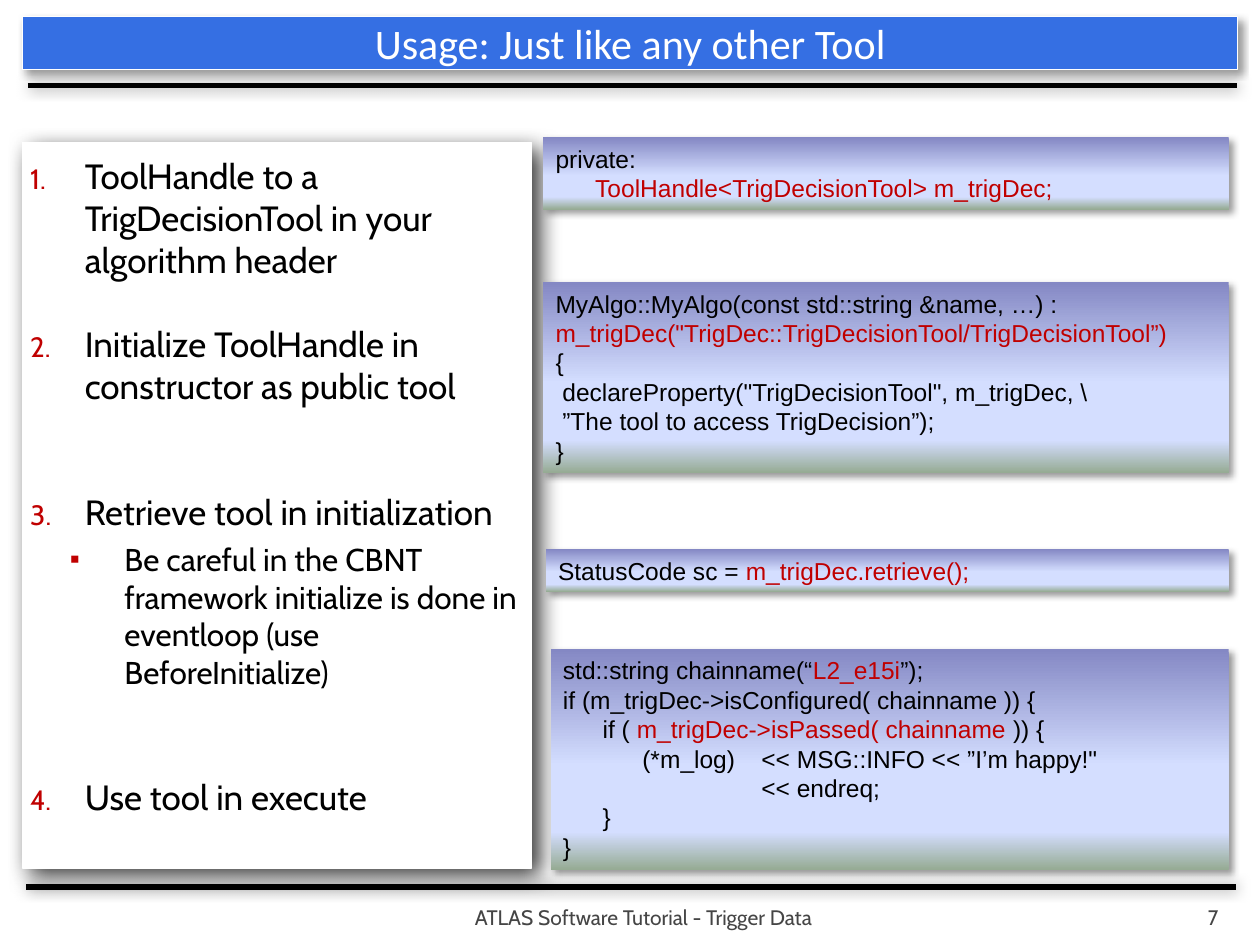
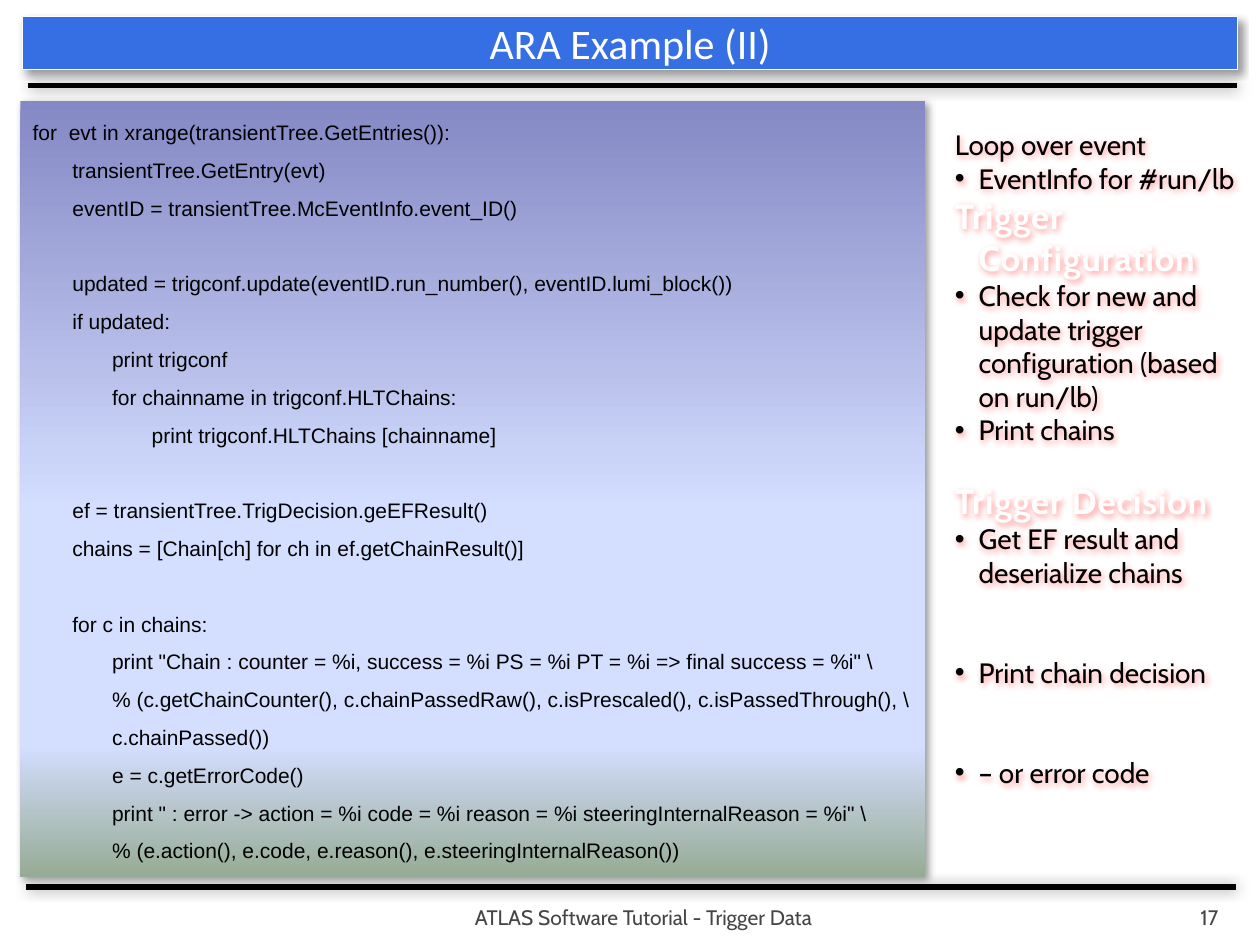
from pptx import Presentation
from pptx.dml.color import RGBColor
from pptx.enum import shapes, text
from pptx.oxml import parse_xml
from pptx.oxml.ns import nsdecls
from pptx.util import Cm, Pt

BLUE = RGBColor(0x35, 0x6F, 0xE3)
WHITE = RGBColor(0xFF, 0xFF, 0xFF)
HEADING = RGBColor(0xFF, 0xFE, 0xFE)
BLACK = RGBColor(0, 0, 0)
RED = RGBColor(0xC0, 0, 0)
GLOW = RGBColor(0xFF, 0, 0)
HEADING_EDGE = RGBColor(0xBF, 0x36, 0x35)
GREY = RGBColor(0x45, 0x45, 0x45)
CODE_STOPS = [
    (0, RGBColor(0x84, 0x88, 0xC4)),
    (53, RGBColor(0xD4, 0xDE, 0xFF)),
    (83, RGBColor(0xD4, 0xDE, 0xFF)),
    (100, RGBColor(0x96, 0xAB, 0x94)),
]
TAB = Cm(0.8)
MARK = "§"

STEPS = [
    (0, 0, "ToolHandle to a TrigDecisionTool in your algorithm header"),
    (0, 24, "Initialize ToolHandle in constructor as public tool"),
    (0, 48, "Retrieve tool in initialization"),
    (1, 4, "Be careful in the CBNT framework initialize is done in "
           "eventloop (use BeforeInitialize)"),
    (0, 48, "Use tool in execute"),
]

USAGE_SNIPPETS = [
    ((10.95, 2.77, 13.82, 1.45), """private:
\t§ToolHandle<TrigDecisionTool> m_trigDec;"""),
    ((10.95, 5.69, 13.82, 3.84),
     """MyAlgo::MyAlgo(const std::string &name, …) : §m_trigDec("TrigDec::TrigDecisionTool/TrigDecisionTool”)
{
 declareProperty("TrigDecisionTool", m_trigDec, \\
 ”The tool to access TrigDecision”);
}"""),
    ((11, 11.07, 13.77, 0.86), "StatusCode sc = §m_trigDec.retrieve();"),
    ((11.1, 13.08, 13.67, 4.45), """std::string chainname(“§L2_e15i§”);
if (m_trigDec->isConfigured( chainname )) {
\tif ( §m_trigDec->isPassed( chainname §)) {
\t\t(*m_log) \t<< MSG::INFO << ”I’m happy!"
\t\t\t\t\t<< endreq;
\t}
}"""),
]

EVENT_LOOP = """for  evt in xrange(transientTree.GetEntries()):
\ttransientTree.GetEntry(evt)
\teventID = transientTree.McEventInfo.event_ID()

\tupdated = trigconf.update(eventID.run_number(), eventID.lumi_block())
\tif updated:
\t\tprint trigconf
\t\tfor chainname in trigconf.HLTChains:
\t\t\tprint trigconf.HLTChains [chainname]

\tef = transientTree.TrigDecision.geEFResult()
\tchains = [Chain[ch] for ch in ef.getChainResult()]

\tfor c in chains:
\t\tprint "Chain : counter = %i, success = %i PS = %i PT = %i => final success = %i" \\
\t\t% (c.getChainCounter(), c.chainPassedRaw(), c.isPrescaled(), c.isPassedThrough(), \\
\t\tc.chainPassed())
\t\te = c.getErrorCode()
\t\tprint " : error -> action = %i code = %i reason = %i steeringInternalReason = %i" \\
\t\t% (e.action(), e.code, e.reason(), e.steeringInternalReason())"""

LOOP_NOTES = [
    ("plain", 0, "Loop over event"),
    ("bullet", 0, "EventInfo for #run/lb"),
    ("heading", 0, "Trigger Configuration"),
    ("bullet", 0, "Check for new and update trigger configuration (based on run/lb)"),
    ("bullet", 0, "Print chains"),
    ("heading", 19, "Trigger Decision"),
    ("bullet", 0, "Get EF result and deserialize chains"),
    ("bullet", 38, "Print chain decision"),
    ("bullet", 38, "– or error code"),
]


def xml(markup):
    head, tail = markup.split(">", 1)
    slash = "/" if head.endswith("/") else ""
    return parse_xml(f"{head.rstrip('/')} {nsdecls('a')}{slash}>{tail}")


def cast_shadow(part, alpha, blur, distance, angle, color=BLACK):
    part._element.spPr.append(xml(
        f'<a:effectLst><a:outerShdw blurRad="{Pt(blur)}" dist="{Pt(distance)}" '
        f'dir="{angle * 60000}" algn="tl" rotWithShape="0"><a:srgbClr val="{color}">'
        f'<a:alpha val="{alpha * 1000}"/></a:srgbClr></a:outerShdw></a:effectLst>'))


def style(run, font, size, color, bold=False):
    run.font.name = font
    run.font.size = Pt(size)
    run.font.color.rgb = color
    run.font.bold = bold


def set_frame(frame, anchor, insets=(0.25, 0.13, 0.25, 0.13)):
    frame.word_wrap = True
    frame.vertical_anchor = anchor
    (frame.margin_left, frame.margin_top,
     frame.margin_right, frame.margin_bottom) = map(Cm, insets)


def add_panel(slide, box):
    panel = slide.shapes.add_shape(shapes.MSO_SHAPE.RECTANGLE, *map(Cm, box))
    panel.line.fill.background()
    return panel


def paragraphs(frame, count):
    return [frame.paragraphs[0]] + [frame.add_paragraph() for _ in range(count - 1)]


def indent(paragraph, left, hang, *bullet):
    props = paragraph._p.get_or_add_pPr()
    props.set("marL", str(Cm(left)))
    props.set("indent", str(-Cm(hang)))
    for markup in bullet:
        props.append(xml(markup))


def add_title(slide, heading):
    title = slide.shapes.title
    title.left, title.top, title.width, title.height = map(Cm, (0.46, 0.33, 24.49, 1.07))
    title.fill.solid()
    title.fill.fore_color.rgb = BLUE
    title.line.color.rgb = WHITE
    title.line.width = Pt(0.75)
    cast_shadow(title, 40, 4, 3, 45)
    title.text_frame.text = heading
    title.text_frame.auto_size = text.MSO_AUTO_SIZE.NONE
    set_frame(title.text_frame, text.MSO_ANCHOR.MIDDLE)
    line = title.text_frame.paragraphs[0]
    line.alignment = text.PP_ALIGN.CENTER
    style(line.runs[0], "Calibri", 24, WHITE)


def add_rule(slide, left, top, width):
    rule = slide.shapes.add_connector(
        shapes.MSO_CONNECTOR.STRAIGHT, Cm(left), Cm(top), Cm(left + width), Cm(top))
    rule.line.color.rgb = BLACK
    rule.line.width = Pt(3)
    cast_shadow(rule, 50, 7.5, 0, 0)


def add_footer(slide, box, words, alignment, side_inset):
    footer = slide.shapes.add_textbox(*map(Cm, box))
    footer.text_frame.text = words
    set_frame(footer.text_frame, text.MSO_ANCHOR.BOTTOM, (side_inset, 0.13, side_inset, 0))
    line = footer.text_frame.paragraphs[0]
    line.alignment = alignment
    style(line.runs[0], "Cabin", 12, GREY)


def add_slide(deck, heading, number):
    slide = deck.slides.add_slide(deck.slide_layouts[5])
    add_title(slide, heading)
    add_rule(slide, 0.56, 1.73, 24.38)
    add_rule(slide, 0.53, 17.88, 24.38)
    add_footer(slide, (5.33, 17.98, 15.29, 0.76),
               "ATLAS Software Tutorial - Trigger Data", text.PP_ALIGN.CENTER, 0.13)
    add_footer(slide, (22.78, 17.98, 2.03, 0.76), number, text.PP_ALIGN.RIGHT, 0.25)
    return slide


def add_code(slide, box, code, size, spacing=None, gap=0):
    panel = add_panel(slide, box)
    panel.fill.gradient()
    panel.fill.gradient_angle = 270
    stops = panel._element.spPr.find(".//{*}gsLst")
    for stop in list(stops):
        stops.remove(stop)
    for position, color in CODE_STOPS:
        stops.append(xml(f'<a:gs pos="{position * 1000}"><a:srgbClr val="{color}"/></a:gs>'))
    cast_shadow(panel, 40, 4, 3, 45)
    set_frame(panel.text_frame, text.MSO_ANCHOR.TOP)
    blocks = [block.split("\n") for block in code.split("\n\n")]
    lines = [(gap if b and not i else 0, line)
             for b, block in enumerate(blocks) for i, line in enumerate(block)]
    tabs = "".join(f'<a:tab pos="{TAB * n}" algn="l"/>' for n in range(1, 7))
    for paragraph, (before, line) in zip(paragraphs(panel.text_frame, len(lines)), lines):
        paragraph.alignment = text.PP_ALIGN.LEFT
        paragraph.space_before = Pt(before)
        if spacing:
            paragraph.line_spacing = spacing
        paragraph._p.get_or_add_pPr().append(xml(f"<a:tabLst>{tabs}</a:tabLst>"))
        for i, piece in enumerate(line.split(MARK)):
            run = paragraph.add_run()
            run.text = piece
            style(run, "Arial", size, RED if i % 2 else BLACK)


def add_steps(slide, box):
    panel = add_panel(slide, box)
    panel.fill.solid()
    panel.fill.fore_color.rgb = WHITE
    panel.line.color.rgb = WHITE
    panel.line.width = Pt(0.75)
    cast_shadow(panel, 78, 13, 6, 45)
    set_frame(panel.text_frame, text.MSO_ANCHOR.TOP, (0.15, 0.25, 0.25, 0.13))
    red = f'<a:buClr><a:srgbClr val="{RED}"/></a:buClr>'
    looks = [
        (20, 1.1, (red, '<a:buSzPct val="80000"/>', '<a:buFont typeface="Cabin"/>',
                   '<a:buAutoNum type="arabicPeriod"/>')),
        (18, 1.9, (red, '<a:buSzPct val="90000"/>', '<a:buFont typeface="Arial"/>',
                   '<a:buChar char="▪"/>')),
    ]
    for paragraph, (level, before, words) in zip(
            paragraphs(panel.text_frame, len(STEPS)), STEPS):
        size, left, bullet = looks[level]
        paragraph.text = words
        paragraph.level = level
        paragraph.alignment = text.PP_ALIGN.LEFT
        paragraph.space_before = Pt(before)
        indent(paragraph, left, 1.1, *bullet)
        style(paragraph.runs[0], "Cabin", size, BLACK)


def add_notes_column(slide, box):
    column = slide.shapes.add_textbox(*map(Cm, box))
    cast_shadow(column, 40, 4, 2, 45, GLOW)
    set_frame(column.text_frame, text.MSO_ANCHOR.TOP)
    for paragraph, (kind, before, words) in zip(
            paragraphs(column.text_frame, len(LOOP_NOTES)), LOOP_NOTES):
        paragraph.text = words
        paragraph.space_before = Pt(before)
        bullet = ('<a:buFont typeface="Arial"/>', '<a:buChar char="•"/>')
        indent(paragraph, 0.48, 0.48, *(bullet if kind == "bullet" else ("<a:buNone/>",)))
        run = paragraph.runs[0]
        if kind == "heading":
            style(run, "Cabin", 20, HEADING, bold=True)
            props = run._r.get_or_add_rPr()
            props.set("spc", "50")
            props.insert(0, xml(f'<a:ln w="{Pt(1)}"><a:solidFill>'
                                f'<a:srgbClr val="{HEADING_EDGE}"/></a:solidFill></a:ln>'))
        else:
            style(run, "Cabin", 16, BLACK)


def build_usage(deck):
    slide = add_slide(deck, "Usage: Just like any other Tool", "7")
    add_steps(slide, (0.46, 2.87, 10.26, 14.63))
    for box, code in USAGE_SNIPPETS:
        add_code(slide, box, code, 14)


def build_example(deck):
    slide = add_slide(deck, "ARA Example (II)", "17")
    add_code(slide, (0.41, 2.03, 18.24, 15.65), EVENT_LOOP, 12, spacing=1.5, gap=21.6)
    add_notes_column(slide, (19, 2.44, 6.4, 15.14))


def main():
    deck = Presentation()
    deck.slide_width, deck.slide_height = Cm(25.4), Cm(19.05)
    build_usage(deck)
    build_example(deck)
    deck.save("out.pptx")


if __name__ == "__main__":
    main()
